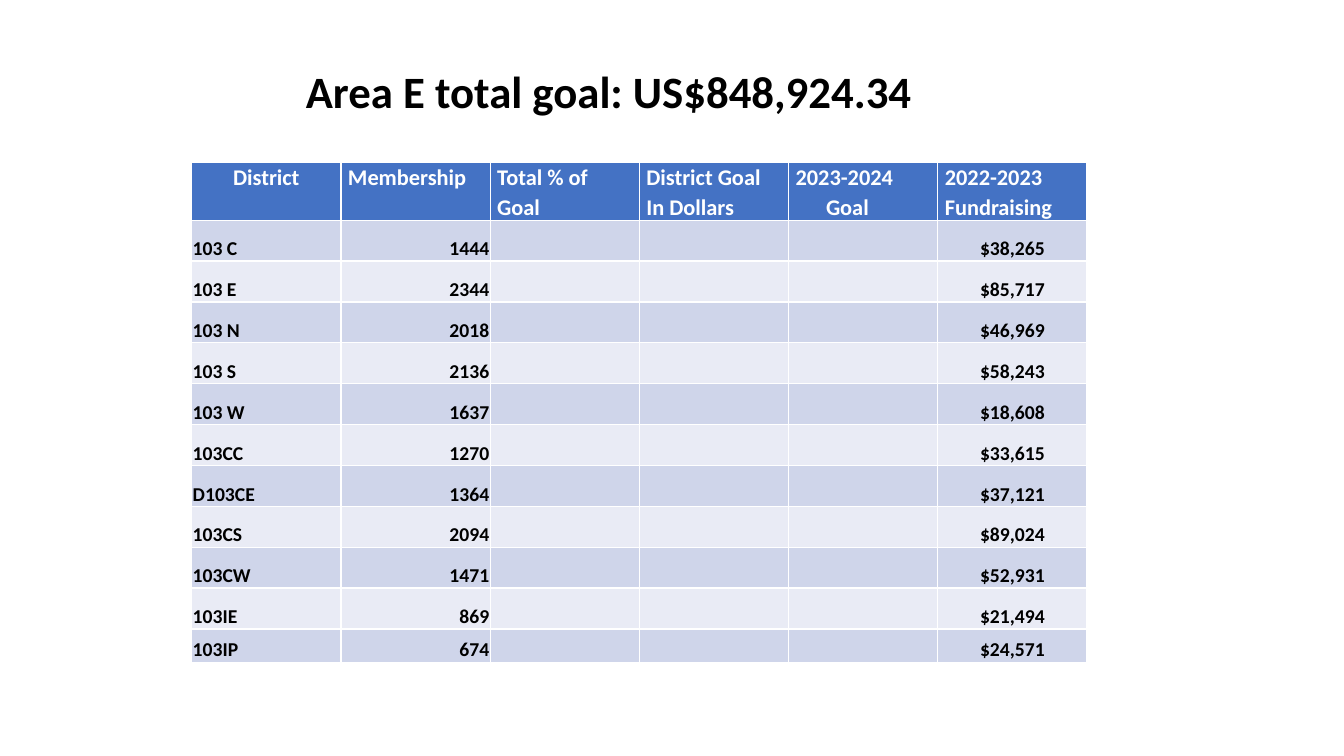
from pptx import Presentation
from pptx.dml.color import RGBColor
from pptx.enum.text import MSO_ANCHOR, MSO_AUTO_SIZE, PP_ALIGN
from pptx.util import Pt

LEFT, CENTER, RIGHT = PP_ALIGN.LEFT, PP_ALIGN.CENTER, PP_ALIGN.RIGHT
TOP, BOTTOM = MSO_ANCHOR.TOP, MSO_ANCHOR.BOTTOM
GROW = MSO_AUTO_SIZE.SHAPE_TO_FIT_TEXT

HEADER_FILL = "4472C4"
BAND_FILLS = ["CFD5EA", "E9EBF5"]
COLUMN_WIDTH = 106.6
HEADER_HEIGHT, ROW_HEIGHT, LAST_HEIGHT = 40.7, 29.2, 23.7
HEADER_MARGINS = {"margin_left": 5, "margin_right": 5, "margin_top": 0, "margin_bottom": 0}
BODY_MARGINS = {"margin_left": 0.7, "margin_right": 0.7, "margin_top": 0.7, "margin_bottom": 0}

headers = [["District"], ["Membership"], ["Total % of Goal"], ["District Goal In Dollars"],
           ["2023-2024", "Goal"], ["2022-2023", "Fundraising"]]
districts = [
    ("103 C", "1444", "$38,265"),
    ("103 E", "2344", "$85,717"),
    ("103 N", "2018", "$46,969"),
    ("103 S", "2136", "$58,243"),
    ("103 W", "1637", "$18,608"),
    ("103CC", "1270", "$33,615"),
    ("D103CE", "1364", "$37,121"),
    ("103CS", "2094", "$89,024"),
    ("103CW", "1471", "$52,931"),
    ("103IE", "869", "$21,494"),
    ("103IP", "674", "$24,571"),
]


def color(value):
    return RGBColor.from_string(value)


def write(paragraph, text, size, text_color, alignment, **formats):
    run = paragraph.add_run()
    run.text = text
    for name, value in {"name": "Calibri", "size": Pt(size), "bold": True}.items():
        setattr(run.font, name, value)
    run.font.color.rgb = color(text_color)
    for name, value in {"alignment": alignment, **formats}.items():
        setattr(paragraph, name, value)


presentation = Presentation()
presentation.slide_width, presentation.slide_height = Pt(960), Pt(540)
slide = presentation.slides.add_slide(presentation.slide_layouts[6])

# Title
title = slide.shapes.add_textbox(Pt(195), Pt(39), Pt(480), Pt(47))
title.text_frame.word_wrap = True
title.text_frame.auto_size = GROW
write(title.text_frame.paragraphs[0], "Area E total goal: US$848,924.34", 32, "000000", CENTER,
      line_spacing=1.07, space_after=Pt(8))

# Table grid
heights = [HEADER_HEIGHT] + [ROW_HEIGHT] * (len(districts) - 1) + [LAST_HEIGHT]
table = slide.shapes.add_table(len(heights), len(headers), Pt(137), Pt(116.2),
                               Pt(COLUMN_WIDTH * len(headers)), Pt(sum(heights))).table
for column in table.columns:
    column.width = Pt(COLUMN_WIDTH)
for row, height in zip(table.rows, heights):
    row.height = Pt(height)

# Fills, margins and anchors
for row_index, row in enumerate(table.rows):
    is_header = row_index == 0
    for cell in row.cells:
        cell.fill.solid()
        cell.fill.fore_color.rgb = color(HEADER_FILL if is_header else BAND_FILLS[(row_index - 1) % 2])
        cell.vertical_anchor = TOP if is_header else BOTTOM
        for name, value in (HEADER_MARGINS if is_header else BODY_MARGINS).items():
            setattr(cell, name, Pt(value))

# Header text
for column_index, lines in enumerate(headers):
    frame = table.cell(0, column_index).text_frame
    for line_index, line in enumerate(lines):
        paragraph = frame.add_paragraph() if line_index else frame.paragraphs[0]
        write(paragraph, line, 16, "FFFFFF", LEFT if column_index else CENTER, line_spacing=1.07)

# "Goal" stands indented under its year
goal_paragraph = table.cell(0, 4).text_frame.paragraphs[1]
goal_paragraph._p.get_or_add_pPr().set("marL", str(Pt(21.7)))

# District figures; the three goal columns stay empty
for row_index, district in enumerate(districts, start=1):
    for column_index, text, alignment in zip((0, 1, 5), district, (LEFT, RIGHT, CENTER)):
        paragraph = table.cell(row_index, column_index).text_frame.paragraphs[0]
        write(paragraph, text, 14, "000000", alignment)

presentation.save("out.pptx")
